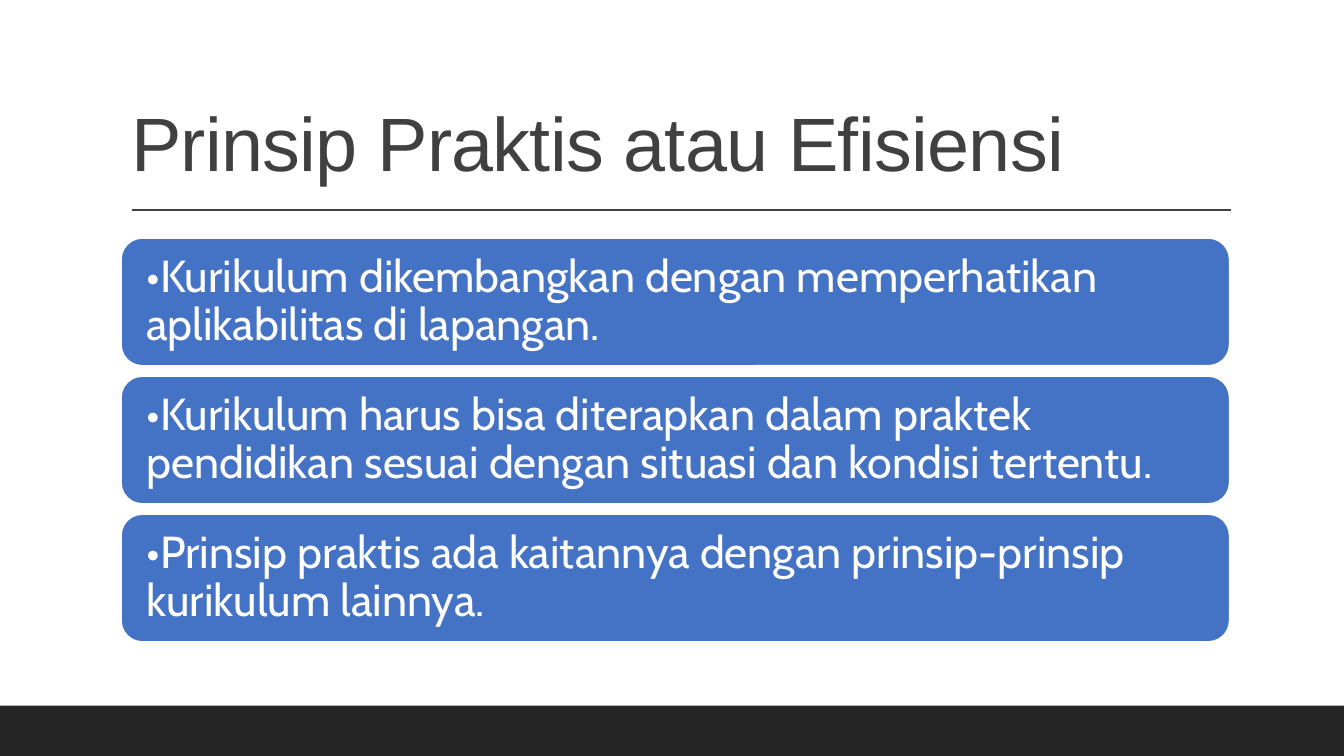
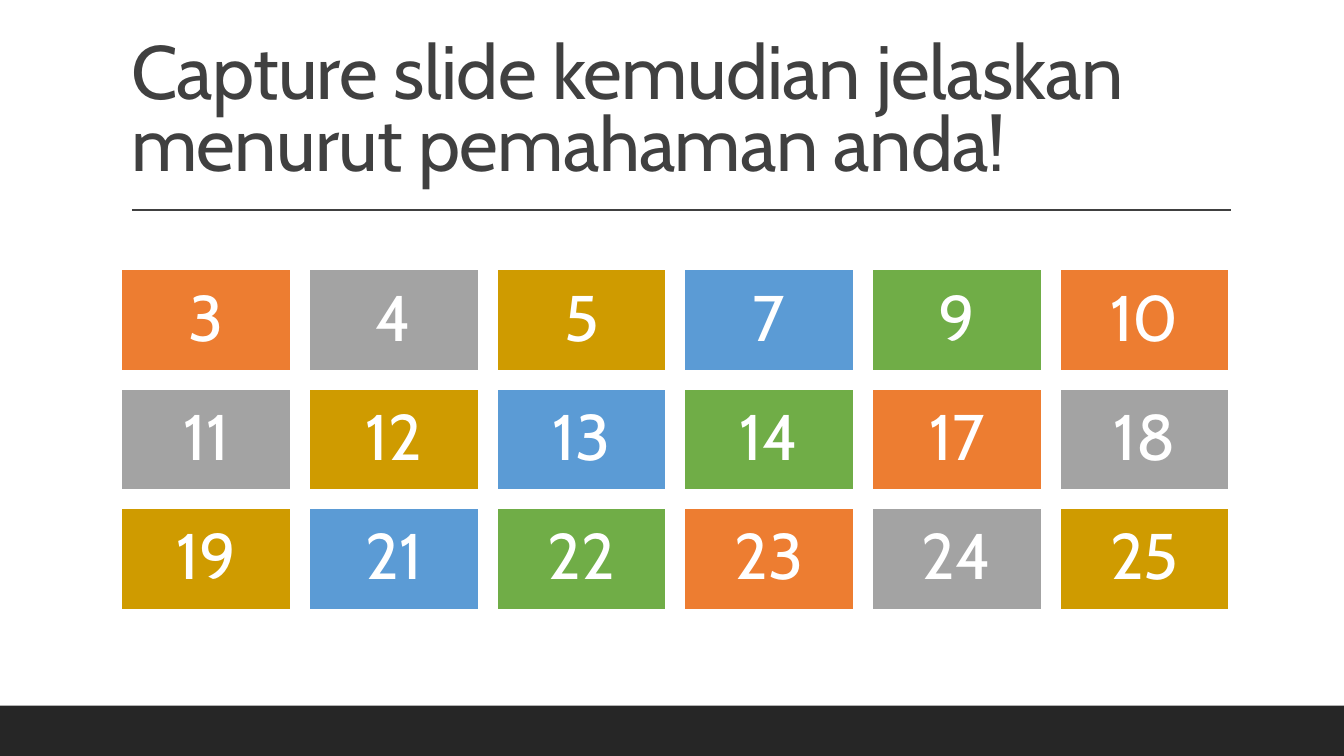
import pptx
import pptx.dml.color
import pptx.enum.shapes
import pptx.enum.text
import pptx.oxml.ns
import pptx.oxml.xmlchemy
import pptx.util

Pt = pptx.util.Pt
MSO_SHAPE = pptx.enum.shapes.MSO_SHAPE
PP_ALIGN = pptx.enum.text.PP_ALIGN
ANCHOR = pptx.enum.text.MSO_ANCHOR

COLORS = {
    "white": "FFFFFF",
    "title": "404040",
    "band": "262626",
    "principle": "4472C4",
    "orange": "ED7D31",
    "gray": "A3A3A3",
    "gold": "CF9B00",
    "blue": "5B9BD5",
    "green": "70AD47",
}
TILE_COLORS = ["orange", "gray", "gold", "blue", "green"]

SLIDE_WIDTH, SLIDE_HEIGHT = 960, 540
CONTENT_LEFT, CONTENT_WIDTH = 86.4, 792
BAND_HEIGHT = 36
RULE_LEFT, RULE_RIGHT, RULE_TOP = 94.3, 879, 150

TITLE_BOX = {
    "left": Pt(CONTENT_LEFT),
    "top": Pt(22.4),
    "width": Pt(CONTENT_WIDTH),
    "height": Pt(114.2),
}
TITLE_FRAME = {
    "word_wrap": True,
    "auto_size": pptx.enum.text.MSO_AUTO_SIZE.NONE,
    "vertical_anchor": ANCHOR.BOTTOM,
}
TITLE_PARAGRAPH = {"alignment": PP_ALIGN.LEFT, "line_spacing": 0.8}
CARD_FRAME = {
    "word_wrap": True,
    "vertical_anchor": ANCHOR.MIDDLE,
    "margin_left": Pt(13.7),
    "margin_right": Pt(13.7),
}

PRINCIPLES = [
    "•Kurikulum dikembangkan dengan memperhatikan aplikabilitas di lapangan.",
    "•Kurikulum harus bisa diterapkan dalam praktek pendidikan sesuai dengan situasi dan kondisi tertentu.",
    "•Prinsip praktis ada kaitannya dengan prinsip-prinsip kurikulum lainnya.",
]
SLIDE_NUMBERS = [3, 4, 5, 7, 9, 10, 11, 12, 13, 14, 17, 18, 19, 21, 22, 23, 24, 25]

PRINCIPLE_STYLE = {
    "preset": MSO_SHAPE.ROUNDED_RECTANGLE,
    "border": 1.25,
    "size": 32,
    "align": PP_ALIGN.LEFT,
}
TILE_STYLE = {
    "preset": MSO_SHAPE.RECTANGLE,
    "border": 2,
    "size": 46,
    "align": PP_ALIGN.CENTER,
}
PRINCIPLE_GRID = {"columns": 1, "top": 170, "height": 91.4, "gap": 7.2}
TILE_GRID = {"columns": 6, "top": 192.2, "height": 73.1, "gap": 12.2}


def apply_format(target, values):
    for name, value in values.items():
        setattr(target, name, value)


def rgb(color):
    return pptx.dml.color.RGBColor.from_string(COLORS[color])


def style_font(font, face, size, color):
    apply_format(font, {"name": face, "size": Pt(size)})
    font.color.rgb = rgb(color)


def add_filled_shape(slide, preset, box, color):
    shape = slide.shapes.add_shape(preset, *map(Pt, box))
    shape.shadow.inherit = False
    shape.fill.solid()
    shape.fill.fore_color.rgb = rgb(color)
    shape.line.fill.background()
    return shape


def add_title(slide, text, face):
    title = slide.shapes.title
    apply_format(title, TITLE_BOX)
    apply_format(title.text_frame, TITLE_FRAME)
    paragraph = title.text_frame.paragraphs[0]
    apply_format(paragraph, TITLE_PARAGRAPH)
    wording = paragraph.add_run()
    wording.text = text
    style_font(wording.font, face, 54, "title")
    wording.font._element.set("spc", "-50")


def add_rule(slide):
    rule = slide.shapes.add_connector(
        pptx.enum.shapes.MSO_CONNECTOR.STRAIGHT,
        *map(Pt, (RULE_LEFT, RULE_TOP, RULE_RIGHT, RULE_TOP)),
    )
    rule.line.color.rgb = rgb("title")
    rule.line.width = Pt(1)
    properties = rule._element.find(pptx.oxml.ns.qn("p:spPr"))
    properties.append(pptx.oxml.xmlchemy.OxmlElement("a:effectLst"))


def add_base_slide(deck, title, face):
    slide = deck.slides.add_slide(deck.slide_layouts.get_by_name("Title Only"))
    band = (0, SLIDE_HEIGHT - BAND_HEIGHT, SLIDE_WIDTH, BAND_HEIGHT)
    add_filled_shape(slide, MSO_SHAPE.RECTANGLE, band, "band")
    add_rule(slide)
    add_title(slide, title, face)
    return slide


def add_card(slide, text, box, color, style):
    card = add_filled_shape(slide, style["preset"], box, color)
    card.line.color.rgb = rgb("white")
    card.line.width = Pt(style["border"])
    apply_format(card.text_frame, CARD_FRAME)
    paragraph = card.text_frame.paragraphs[0]
    apply_format(paragraph, {"alignment": style["align"], "line_spacing": 0.9})
    wording = paragraph.add_run()
    wording.text = text
    style_font(wording.font, "Cabin", style["size"], "white")


def add_card_grid(slide, texts, colors, grid, style):
    columns, height, gap = grid["columns"], grid["height"], grid["gap"]
    width = (CONTENT_WIDTH - gap * (columns - 1)) / columns
    for index, text in enumerate(texts):
        row, column = divmod(index, columns)
        left = CONTENT_LEFT + column * (width + gap)
        top = grid["top"] + row * (height + gap)
        color = colors[index % len(colors)]
        add_card(slide, text, (left, top, width, height), color, style)


def main():
    deck = pptx.Presentation()
    apply_format(deck, {"slide_width": Pt(SLIDE_WIDTH), "slide_height": Pt(SLIDE_HEIGHT)})

    principles = add_base_slide(deck, "Prinsip Praktis atau Efisiensi", "Arial")
    add_card_grid(principles, PRINCIPLES, ["principle"], PRINCIPLE_GRID, PRINCIPLE_STYLE)

    task = add_base_slide(deck, "Capture slide kemudian jelaskan menurut pemahaman anda!", "Cabin")
    add_card_grid(task, map(str, SLIDE_NUMBERS), TILE_COLORS, TILE_GRID, TILE_STYLE)

    deck.save("out.pptx")


if __name__ == "__main__":
    main()
